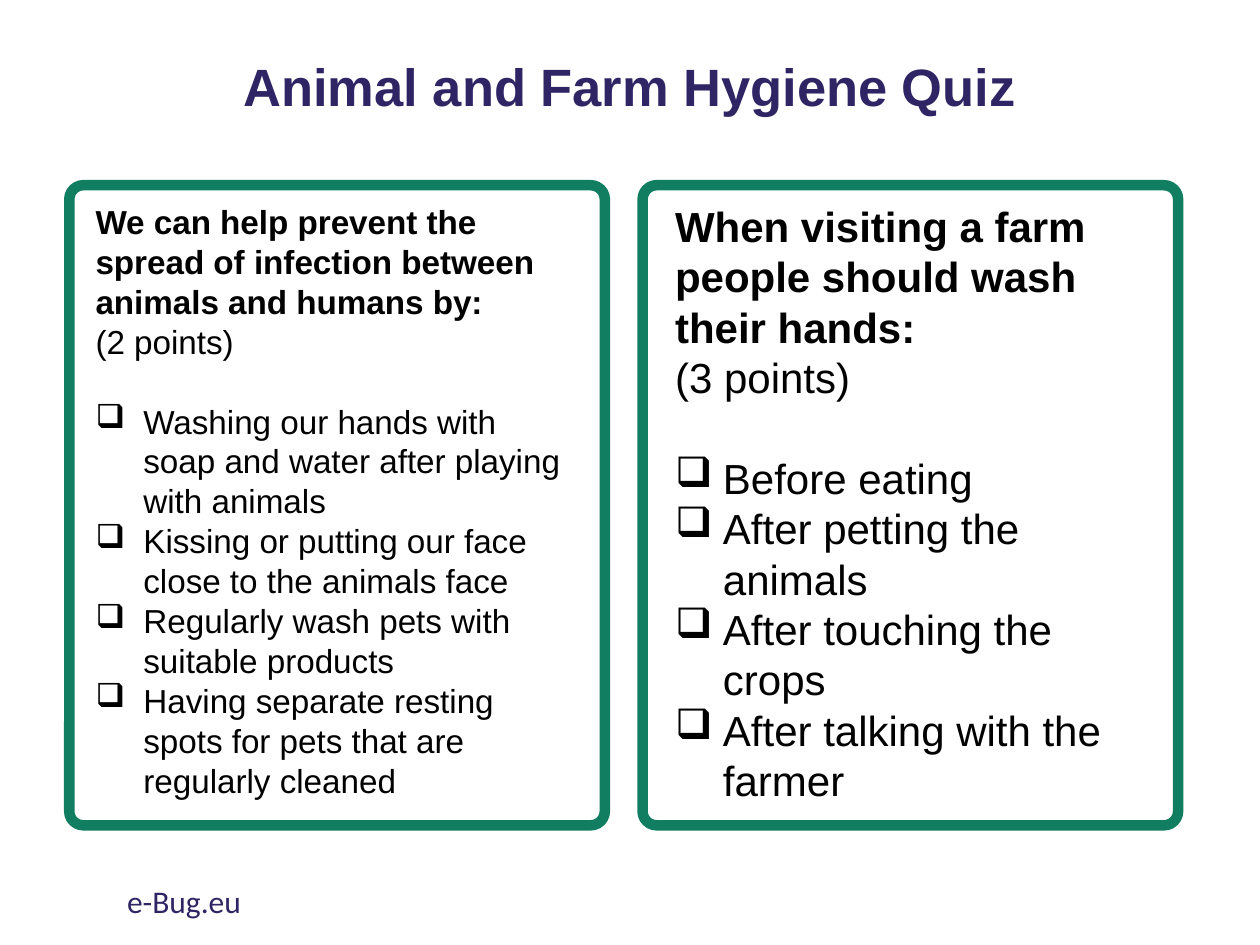
from lxml import etree
from pptx import Presentation
from pptx.dml.color import RGBColor
from pptx.enum.shapes import MSO_SHAPE
from pptx.enum.text import MSO_ANCHOR, PP_ALIGN
from pptx.oxml.ns import qn
from pptx.util import Inches, Pt

ROUND = MSO_SHAPE.ROUNDED_RECTANGLE
MIDDLE = MSO_ANCHOR.MIDDLE
CENTER = PP_ALIGN.CENTER
NAVY, GREEN, BLACK = "302564", "117E62", "000000"

LEFT = (
    "We can help prevent the spread of infection between animals and humans by:",
    "(2 points)",
    ["Washing our hands with soap and water after playing with animals",
     "Kissing or putting our face close to the animals face",
     "Regularly wash pets with suitable products",
     "Having separate resting spots for pets that are regularly cleaned"],
)
RIGHT = (
    "When visiting a farm people should wash their hands:",
    "(3 points)",
    ["Before eating", "After petting the animals",
     "After touching the crops", "After talking with the farmer"],
)


def paint(color):
    """Turn a hex string into a colour."""
    return RGBColor.from_string(color)


def style(para, size, color, bold=False, name="Arial"):
    """Set the font of a paragraph."""
    font = para.font
    font.size, font.bold, font.name = Pt(size), bold, name
    font.color.rgb = paint(color)


def add_box(slide, left, top, width, height):
    """Add a wrapping text box and return its text frame."""
    box = slide.shapes.add_textbox(
        Inches(left), Inches(top), Inches(width), Inches(height))
    box.text_frame.word_wrap = True
    return box.text_frame


def add_title(slide, text):
    """Place and fill the title."""
    title = slide.shapes.title
    title.left, title.top = Inches(0.7), Inches(0.31)
    title.width, title.height = Inches(8.6), Inches(0.8)
    frame = title.text_frame
    frame.text = text
    frame.vertical_anchor = MIDDLE
    para = frame.paragraphs[0]
    para.alignment, para.line_spacing = CENTER, 0.9
    style(para, 30, NAVY, True)


def add_frame(slide, left):
    """Add the green outline of a question."""
    shape = slide.shapes.add_shape(
        ROUND, Inches(left), Inches(1.47), Inches(4.25), Inches(5.08))
    shape.adjustments[0] = 0.026
    shape.shadow.inherit = False
    shape.fill.background()
    shape.line.color.rgb = paint(GREEN)
    shape.line.width = Pt(6)


def add_check(para):
    """Give a paragraph a hanging checkbox bullet."""
    props = para._p.get_or_add_pPr()
    props.set("marL", str(Inches(0.38)))
    props.set("indent", str(-Inches(0.38)))
    etree.SubElement(props, qn("a:buChar"), char="❑")
    tabs = etree.SubElement(props, qn("a:tabLst"))
    etree.SubElement(tabs, qn("a:tab"), pos=str(Inches(0.5)), algn="l")


def add_quiz(slide, quiz, size, *place):
    """Write a question, its points and its options."""
    ask, points, options = quiz
    frame = add_box(slide, *place)
    pitch = Pt(size * 1.2)
    for i, text in enumerate([ask, points, *options]):
        para = frame.paragraphs[0] if i == 0 else frame.add_paragraph()
        para.text = text
        para.line_spacing = pitch
        if i == 2:
            para.space_before = pitch
        if i > 1:
            add_check(para)
        style(para, size, BLACK, i == 0)


def add_foot(slide, text):
    """Write the web address at the bottom."""
    para = add_box(slide, 0.91, 6.95, 3.38, 0.4).paragraphs[0]
    para.text = text
    style(para, 18, NAVY, name="Calibri")


def main():
    """Build the quiz slide."""
    deck = Presentation()
    deck.slide_width, deck.slide_height = Inches(10), Inches(7.5)
    slide = deck.slides.add_slide(deck.slide_layouts[5])
    add_title(slide, "Animal and Farm Hygiene Quiz")
    add_frame(slide, 0.55)
    add_quiz(slide, LEFT, 19, 0.66, 1.55, 4.01, 4.9)
    add_frame(slide, 5.1)
    add_quiz(slide, RIGHT, 24, 5.26, 1.54, 3.97, 4.95)
    add_foot(slide, "e-Bug.eu")
    deck.save("out.pptx")


if __name__ == "__main__":
    main()
